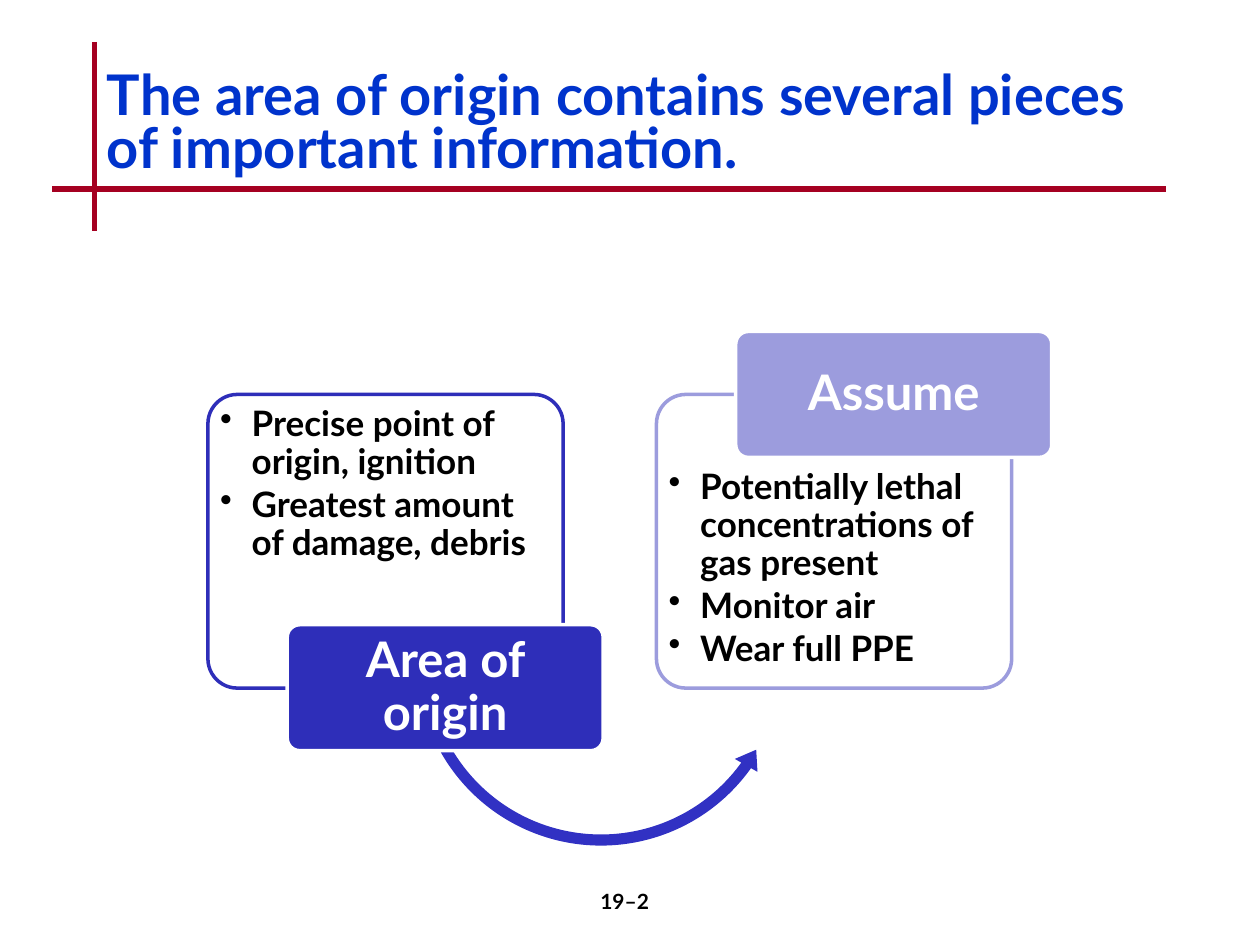
"""Build the slide on the area of origin with two linked panels."""
from lxml.etree import SubElement
from pptx import Presentation
from pptx.dml.color import RGBColor
from pptx.enum.shapes import MSO_CONNECTOR, MSO_SHAPE
from pptx.enum.text import MSO_ANCHOR, PP_ALIGN
from pptx.oxml.ns import qn
from pptx.util import Pt

HUES = {
    "title": "0033CC", "rule": "A50021", "text": "000000", "white": "FFFFFF",
    "deep": "2E2EB9", "pale": "9C9CDD", "arc": "3131C3",
}
TITLE = {"size": 32, "hue": "title", "line_spacing": 0.8, "anchor": MSO_ANCHOR.MIDDLE}
PAGE = {"size": 12, "hue": "text", "alignment": PP_ALIGN.CENTER}
LIST = {"size": 20, "hue": "text", "line_spacing": 0.9, "space_after": Pt(3),
        "pad": (3, 3), "bullet": True}
TAG = {"size": 28, "hue": "white", "line_spacing": 0.9, "alignment": PP_ALIGN.CENTER,
       "anchor": MSO_ANCHOR.MIDDLE, "pad": (4, 3)}
PANELS = [
    {"left": 118.8, "hue": "deep", "tag": "Area of origin", "drop": 0, "top": 357,
     "items": ["Precise point of origin, ignition", "Greatest amount of damage, debris"]},
    {"left": 375.1, "hue": "pale", "tag": "Assume", "drop": 36, "top": 189.4,
     "items": ["Potentially lethal concentrations of gas present", "Monitor air",
               "Wear full PPE"]},
]


def color(name):
    return RGBColor.from_string(HUES[name])


def add_rule(slide, *ends):
    rule = slide.shapes.add_connector(MSO_CONNECTOR.STRAIGHT, *map(Pt, ends))
    rule.line.color.rgb = color("rule")
    rule.line.width = Pt(3)
    SubElement(rule._element.spPr, qn("a:effectLst"))


def add_form(slide, kind, area, turns, fill, edge=None):
    form = slide.shapes.add_shape(kind, *map(Pt, area))
    form.shadow.inherit = False
    for i, turn in enumerate(turns):
        form.adjustments[i] = turn
    form.fill.solid()
    form.fill.fore_color.rgb = color(fill)
    if edge:
        form.line.color.rgb = color(edge)
        form.line.width = Pt(2)
    else:
        form.line.fill.background()
    return form


def add_bullet(para):
    props = para._p.get_or_add_pPr()
    props.set("marL", str(Pt(18)))
    props.set("indent", str(Pt(-18)))
    SubElement(props, qn("a:buChar"), char="•")


def add_text(slide, area, lines, look):
    frame = slide.shapes.add_textbox(*map(Pt, area)).text_frame
    side, end = look.get("pad", (7.2, 3.6))
    setup = {"word_wrap": True, "vertical_anchor": look.get("anchor", MSO_ANCHOR.TOP),
             "margin_left": Pt(side), "margin_right": Pt(side),
             "margin_top": Pt(end), "margin_bottom": Pt(end)}
    for key, value in setup.items():
        setattr(frame, key, value)
    for i, line in enumerate(lines):
        para = frame.add_paragraph() if i else frame.paragraphs[0]
        para.text = line
        for key in ("alignment", "line_spacing", "space_after"):
            if key in look and (key != "space_after" or i < len(lines) - 1):
                setattr(para, key, look[key])
        if look.get("bullet"):
            add_bullet(para)
        font = para.runs[0].font
        for key, value in {"name": "Lato", "size": Pt(look["size"]), "bold": True}.items():
            setattr(font, key, value)
        font.color.rgb = color(look["hue"])


def add_panel(slide, left, hue, items, drop):
    area = (left, 225.4, 203, 167.8)
    form = add_form(slide, MSO_SHAPE.ROUNDED_RECTANGLE, area, [0.1], "white", hue)
    tint = form._element.spPr.find(qn("a:solidFill"))[0]
    SubElement(tint, qn("a:alpha"), val="90000")
    add_text(slide, (left + 4, 229.2 + drop, 195.1, 123.8), items, LIST)


def add_tag(slide, left, top, hue, label):
    area = (left, top, 180.6, 72)
    add_form(slide, MSO_SHAPE.ROUNDED_RECTANGLE, area, [0.1], hue, "white")
    add_text(slide, (left + 2.1, top + 2.1, 176.4, 67.8), [label], TAG)


def add_arc(slide):
    turns = [0.029, 3.589, 21.345, 90.245, 0.034]
    add_form(slide, MSO_SHAPE.LEFT_CIRCULAR_ARROW, (234, 268.6, 218.9, 218.9), turns, "arc")


def main():
    deck = Presentation()
    deck.slide_width, deck.slide_height = Pt(720), Pt(540)
    slide = deck.slides.add_slide(deck.slide_layouts[6])
    add_rule(slide, 54, 24, 54, 132)
    add_rule(slide, 30, 108, 666, 108)
    title = "The area of origin contains several pieces of important information."
    add_text(slide, (54, 36, 625.7, 72), [title], TITLE)
    add_text(slide, (282, 504, 150, 36), ["19–2"], PAGE)
    for i, part in enumerate(PANELS):
        add_panel(slide, part["left"], part["hue"], part["items"], part["drop"])
        if i == 0:
            add_arc(slide)
        add_tag(slide, part["left"] + 45.3, part["top"], part["hue"], part["tag"])
    deck.save("out.pptx")


if __name__ == "__main__":
    main()
